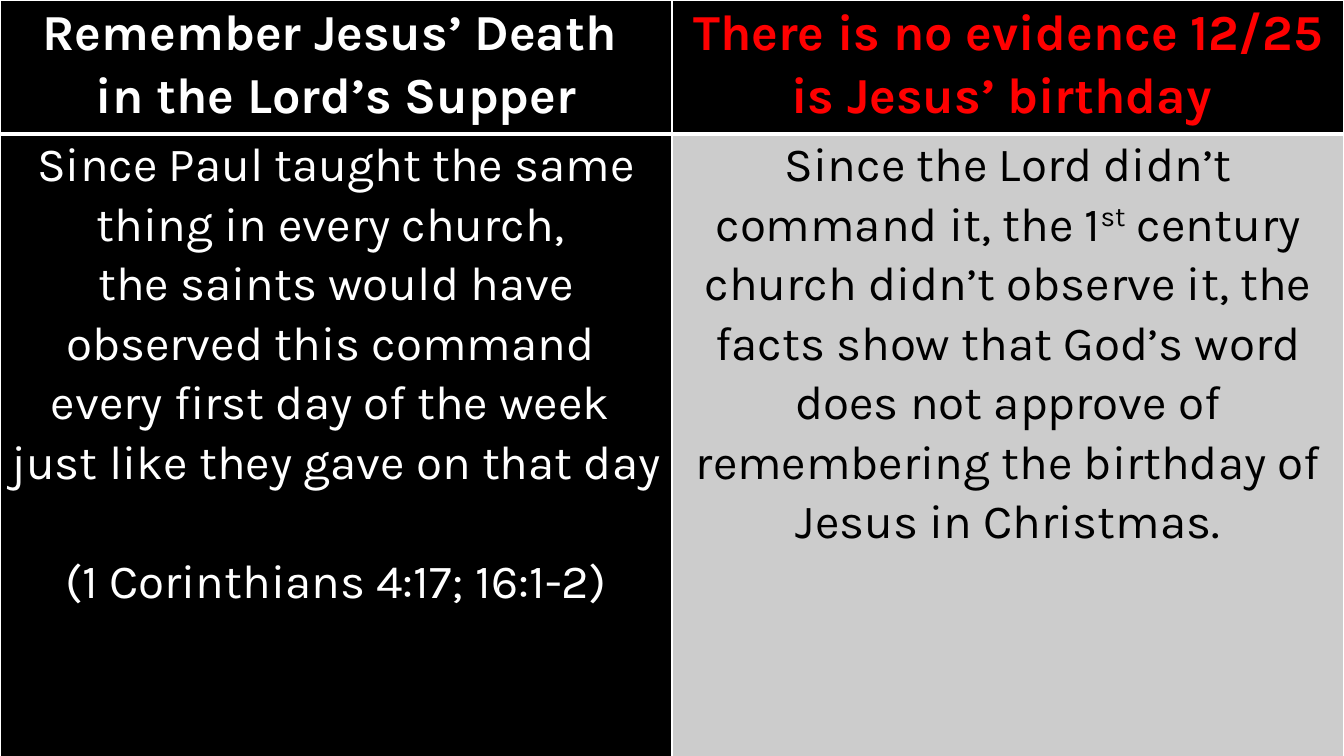
from lxml import etree
from pptx import Presentation
from pptx import util as u
from pptx.dml.color import RGBColor
from pptx.enum import text
from pptx.oxml.ns import qn

BLACK = RGBColor(0, 0, 0)
WHITE = RGBColor(255, 255, 255)
RED = RGBColor(255, 0, 0)
GRAY = RGBColor(204, 204, 204)
WIDE, TALL = 13.33, 7.5


class Board:
    font = "Karla"
    lead = 1.07
    side = u.Inches(0.07)

    def __init__(self, slide):
        self.slide = slide
        fill = slide.background.fill
        fill.solid()
        fill.fore_color.rgb = BLACK

    def table(self, wide, rows, cols):
        frame = self.slide.shapes.add_table(
            len(rows), cols, 0, 0, u.Inches(wide), u.Inches(sum(rows)))
        grid = frame.table
        grid.first_row = grid.horz_banding = False
        for col in grid.columns:
            col.width = u.Inches(wide / cols)
        for row, high in zip(grid.rows, rows):
            row.height = u.Inches(high)
        return grid

    def edge(self, cell, tag, width):
        props = cell._tc.get_or_add_tcPr()
        line = etree.SubElement(props, qn("a:" + tag), w=str(u.Pt(width)))
        fill = etree.SubElement(line, qn("a:solidFill"))
        etree.SubElement(fill, qn("a:srgbClr"), val=str(WHITE))

    def cell(self, cell, paras, size, color, back, bold, edges):
        cell.margin_left = cell.margin_right = self.side
        cell.margin_top = cell.margin_bottom = 0
        for tag, width in edges.items():
            self.edge(cell, tag, width)
        cell.fill.solid()
        cell.fill.fore_color.rgb = back
        frame = cell.text_frame
        frame.text = "\n".join(paras)
        for para in frame.paragraphs:
            para.alignment = text.PP_ALIGN.CENTER
            para.line_spacing = self.lead
            for run in para.runs:
                self.style(run, size, color, bold)

    def style(self, run, size, color, bold):
        font = run.font
        font.name = self.font
        font.size = u.Pt(size)
        font.bold = bold
        font.color.rgb = color

    def add(self, para, words, size, color, raised=False):
        run = para.add_run()
        run.text = words
        self.style(run, size, color, False)
        if raised:
            run.font._element.set("baseline", "30000")


def main():
    deck = Presentation()
    deck.slide_width, deck.slide_height = u.Inches(WIDE), u.Inches(TALL)
    board = Board(deck.slides.add_slide(deck.slide_layouts[6]))
    grid = board.table(WIDE, [1.33, 6.67], 2)

    head = {"lnL": 1, "lnR": 1, "lnT": 1, "lnB": 3}
    body = {"lnL": 1, "lnR": 1, "lnT": 3, "lnB": 1}
    supper = ["Remember Jesus’ Death ", "in the Lord’s Supper"]
    birth = ["There is no evidence 12/25 is Jesus’ birthday "]
    saints = [
        "Since Paul taught the same thing in every church, ",
        "the saints would have observed this command ",
        "every first day of the week ",
        "just like they gave on that day",
        "(1 Corinthians 4:17; 16:1-2)",
    ]
    church = ["Since the Lord didn’t command it, the 1"]
    board.cell(grid.cell(0, 0), supper, 36, WHITE, BLACK, True, head)
    board.cell(grid.cell(0, 1), birth, 36, RED, BLACK, True, head)
    board.cell(grid.cell(1, 0), saints, 34, WHITE, BLACK, False, body)
    board.cell(grid.cell(1, 1), church, 34, BLACK, GRAY, False, body)

    verse = grid.cell(1, 0).text_frame.paragraphs[-1]
    verse.space_before = u.Pt(42.5)
    facts = grid.cell(1, 1).text_frame.paragraphs[0]
    board.add(facts, "st", 34, BLACK, True)
    board.add(facts, " century church didn’t observe it, the facts show that "
              "God’s word does not approve of remembering the birthday of "
              "Jesus in Christmas.", 34, BLACK)
    deck.save("out.pptx")


if __name__ == "__main__":
    main()
